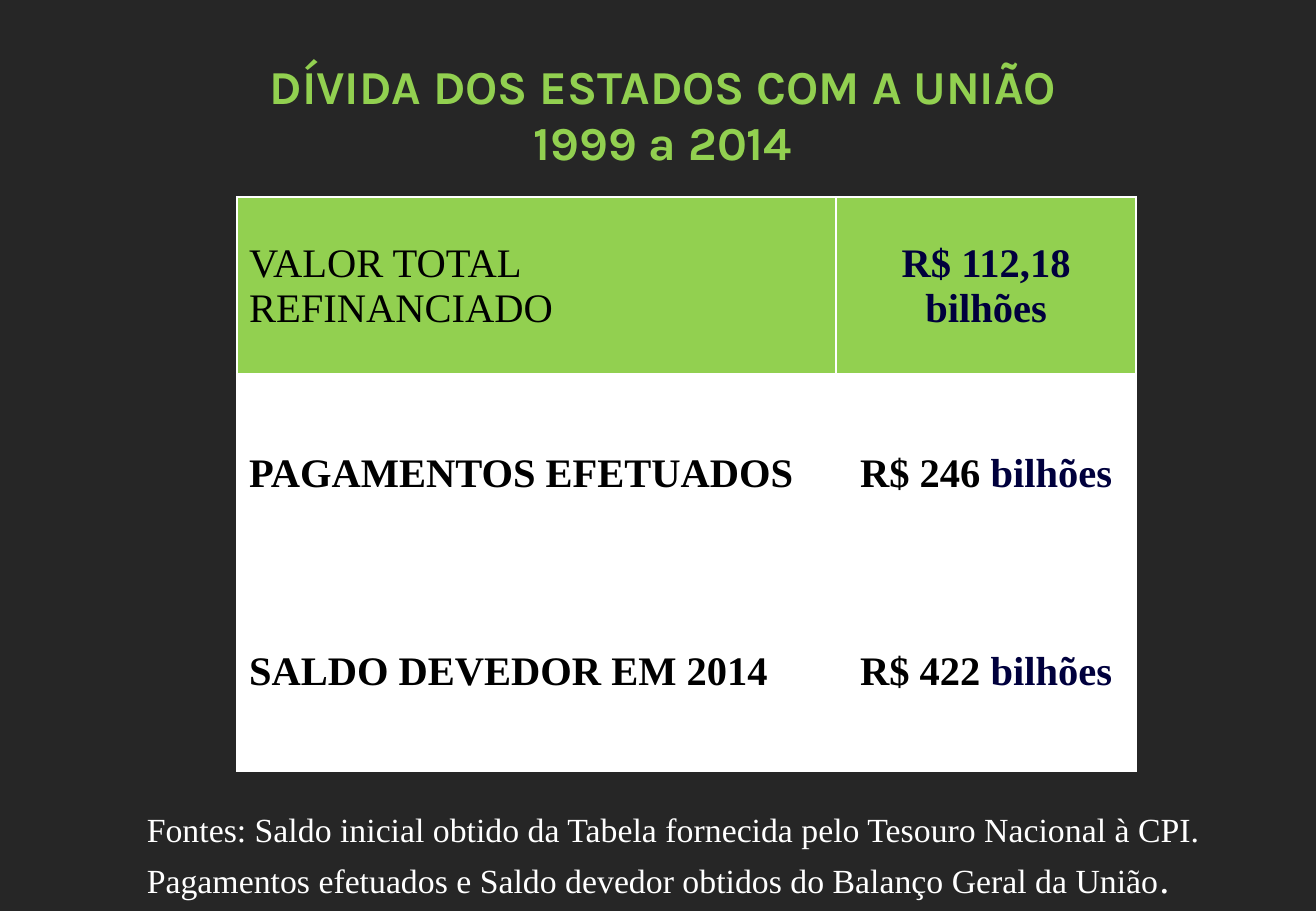
from dataclasses import dataclass

from lxml import etree
from pptx import Presentation
from pptx.dml.color import RGBColor
from pptx.enum.text import MSO_ANCHOR, PP_ALIGN
from pptx.oxml.ns import qn
from pptx.util import Inches, Pt

LEFT, CENTER = PP_ALIGN.LEFT, PP_ALIGN.CENTER
MIDDLE = MSO_ANCHOR.MIDDLE


@dataclass(frozen=True)
class Theme:
    background: str = "262626"
    green: str = "92D050"
    navy: str = "00003D"
    black: str = "000000"
    white: str = "FFFFFF"
    title_font: str = "Karla"
    body_font: str = "Times New Roman"
    title_size: int = 28
    table_size: int = 24
    source_size: int = 20


THEME = Theme()
COLUMN_WIDTHS = (4.93, 2.47)
ROW_HEIGHTS = (1.47, 1.63, 1.63)
DEBT_ROWS = (
    ("VALOR TOTAL REFINANCIADO", "R$ 112,18 ", THEME.navy, THEME.green, False),
    ("PAGAMENTOS EFETUADOS", "R$ 246 ", THEME.black, THEME.white, True),
    ("SALDO DEVEDOR EM 2014", "R$ 422 ", THEME.black, THEME.white, True),
)


def add_text(paragraph, text, *, size=THEME.table_size, font=THEME.body_font,
             color=THEME.black, bold=False, align=LEFT):
    paragraph.alignment = align
    run = paragraph.add_run()
    run.text = text
    run.font.size = Pt(size)
    run.font.name = font
    run.font.bold = bold
    run.font.color.rgb = RGBColor.from_string(color)


def add_text_box(slide, left, top, width, height):
    frame = slide.shapes.add_textbox(
        Inches(left), Inches(top), Inches(width), Inches(height)).text_frame
    frame.word_wrap = True
    return frame


def add_title(slide, lines):
    frame = add_text_box(slide, 0.61, 0.42, 9.69, 1.04)
    for index, line in enumerate(lines):
        paragraph = frame.add_paragraph() if index else frame.paragraphs[0]
        add_text(paragraph, line, size=THEME.title_size, font=THEME.title_font,
                 color=THEME.green, bold=True, align=CENTER)


def style_cell(cell, fill, bottom_width):
    cell.vertical_anchor = MIDDLE
    properties = cell._tc.get_or_add_tcPr()
    for side in ("lnL", "lnR", "lnT", "lnB"):
        width = bottom_width if side == "lnB" else 1
        line = etree.SubElement(properties, qn(f"a:{side}"), w=str(Pt(width)))
        solid = etree.SubElement(line, qn("a:solidFill"))
        etree.SubElement(solid, qn("a:srgbClr"), val=THEME.white)
    cell.fill.solid()
    cell.fill.fore_color.rgb = RGBColor.from_string(fill)


def add_debt_table(slide):
    table = slide.shapes.add_table(
        len(DEBT_ROWS), len(COLUMN_WIDTHS), Inches(1.95), Inches(1.62),
        Inches(sum(COLUMN_WIDTHS)), Inches(sum(ROW_HEIGHTS))).table
    for column, width in zip(table.columns, COLUMN_WIDTHS):
        column.width = Inches(width)
    for index, (label, amount, amount_color, fill, bold) in enumerate(DEBT_ROWS):
        table.rows[index].height = Inches(ROW_HEIGHTS[index])
        label_cell, amount_cell = table.cell(index, 0), table.cell(index, 1)
        for cell in (label_cell, amount_cell):
            style_cell(cell, fill, 1 if index else 3)
        add_text(label_cell.text_frame.paragraphs[0], label, bold=bold)
        paragraph = amount_cell.text_frame.paragraphs[0]
        for text, color in ((amount, amount_color), ("bilhões", THEME.navy)):
            add_text(paragraph, text, color=color, bold=True, align=CENTER)


def add_sources(slide, text):
    paragraph = add_text_box(slide, 0.61, 6.58, 10.22, 0.84).paragraphs[0]
    paragraph.level = 1
    paragraph.line_spacing = 1.08
    properties = paragraph._p.get_or_add_pPr()
    properties.set("marL", str(Inches(0.5)))
    properties.set("indent", "0")
    add_text(paragraph, text, size=THEME.source_size, color=THEME.white)
    add_text(paragraph, ".", color=THEME.white)


def main():
    presentation = Presentation()
    presentation.slide_width = Inches(10.83)
    presentation.slide_height = Inches(7.5)
    slide = presentation.slides.add_slide(presentation.slide_layouts[6])
    slide.background.fill.solid()
    slide.background.fill.fore_color.rgb = RGBColor.from_string(THEME.background)
    add_debt_table(slide)
    add_title(slide, ("DÍVIDA DOS ESTADOS COM A UNIÃO", "1999 a 2014"))
    add_sources(slide, "Fontes: Saldo inicial obtido da Tabela fornecida pelo "
                       "Tesouro Nacional à CPI. Pagamentos efetuados e Saldo "
                       "devedor obtidos do Balanço Geral da União")
    presentation.save("out.pptx")


if __name__ == "__main__":
    main()
